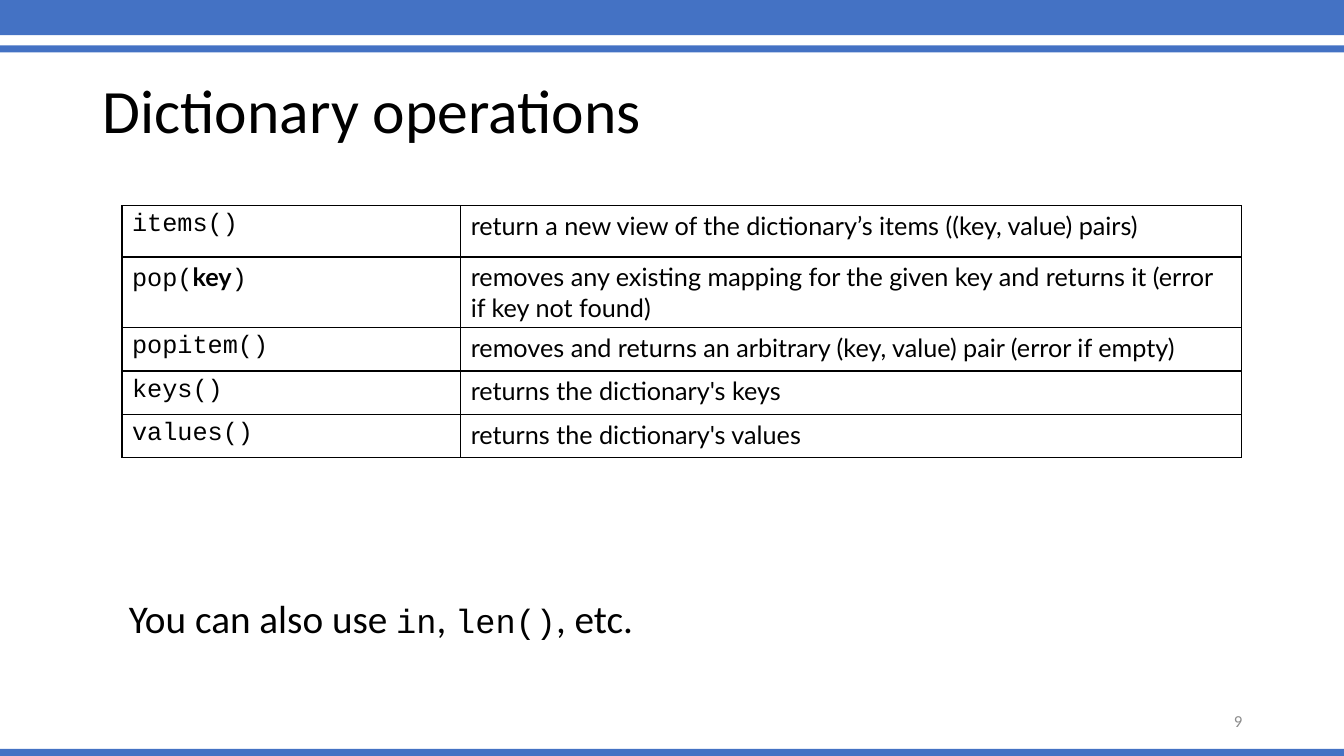
from lxml import etree
from pptx import Presentation
from pptx.dml.color import RGBColor
from pptx.enum.shapes import MSO_SHAPE
from pptx.enum.text import MSO_ANCHOR, PP_ALIGN
from pptx.oxml.ns import qn
from pptx.util import Inches, Pt

RECTANGLE = MSO_SHAPE.RECTANGLE
MIDDLE = MSO_ANCHOR.MIDDLE
LEFT, RIGHT = PP_ALIGN.LEFT, PP_ALIGN.RIGHT

# Content
BLUE, BLACK, GRAY = "4472C4", "000000", "8C8C8C"
SANS, CODE, BODY = "Calibri", "Courier New", "Lato"
WIDTH, HEIGHT = 13.33, 7.5

BANDS = [(0, 0.35), (0.45, 0.07), (7.43, 0.07)]  # top, height

# Runs are (text, font, size, bold)
TITLE = [("Dictionary operations", SANS, 44, False)]
CLOSING = [
    ("You can also use ", SANS, 28, False),
    ("in", CODE, 24, False),
    (", ", SANS, 28, False),
    ("len()", CODE, 24, False),
    (", etc.", SANS, 28, False),
]
PAGE_NUMBER = [("9", SANS, 12, False)]

# Box, runs, colour, alignment, line spacing
TEXTS = [
    ((0.92, 0.4, 11.5, 1.45), TITLE, BLACK, LEFT, 0.9),
    ((1.18, 5.43, 11.24, 1.45), CLOSING, BLACK, LEFT, 0.9),
    ((9.42, 6.95, 3, 0.4), PAGE_NUMBER, GRAY, RIGHT, 1.0),
]

TABLE_LEFT, TABLE_TOP = 1.21, 2.04
COLUMN_WIDTHS = [3.36, 7.74]
# Row height, parts of the call as (text, font, bold), description
OPERATIONS = [
    (0.51, [("items()", CODE, False)],
     "return a new view of the dictionary’s items ((key, value) pairs)"),
    (0.7, [("pop(", CODE, False), ("key", BODY, True), (")", CODE, False)],
     "removes any existing mapping for the given key and returns it "
     "(error if key not found)"),
    (0.43, [("popitem()", CODE, False)],
     "removes and returns an arbitrary (key, value) pair (error if empty)"),
    (0.43, [("keys()", CODE, False)], "returns the dictionary's keys"),
    (0.43, [("values()", CODE, False)], "returns the dictionary's values"),
]
TABLE_SIZE = 18


def color(value):
    return RGBColor.from_string(value)


def write(para, runs, ink):
    for text, font, size, bold in runs:
        span = para.add_run()
        span.text = text
        span.font.color.rgb = color(ink)
        for name, value in {"name": font, "size": Pt(size), "bold": bold}.items():
            setattr(span.font, name, value)


def add_borders(cell, ink, points):
    properties = cell._tc.get_or_add_tcPr()
    for side in ("a:lnL", "a:lnR", "a:lnT", "a:lnB"):
        line = etree.SubElement(properties, qn(side), w=str(Pt(points)))
        fill = etree.SubElement(line, qn("a:solidFill"))
        etree.SubElement(fill, qn("a:srgbClr"), val=ink)


deck = Presentation()
deck.slide_width, deck.slide_height = Inches(WIDTH), Inches(HEIGHT)
page = deck.slides.add_slide(deck.slide_layouts[6])

# Blue bands
for top, height in BANDS:
    band = page.shapes.add_shape(
        RECTANGLE, 0, Inches(top), deck.slide_width, Inches(height))
    band.shadow.inherit = False
    band.fill.solid()
    band.fill.fore_color.rgb = color(BLUE)
    band.line.fill.background()

# Title, closing line and page number
for place, runs, ink, alignment, spacing in TEXTS:
    box = page.shapes.add_textbox(*map(Inches, place))
    box.text_frame.word_wrap = True
    box.text_frame.vertical_anchor = MIDDLE
    para = box.text_frame.paragraphs[0]
    para.alignment = alignment
    para.line_spacing = spacing
    write(para, runs, ink)

# Table of operations
table = page.shapes.add_table(
    len(OPERATIONS), len(COLUMN_WIDTHS), Inches(TABLE_LEFT), Inches(TABLE_TOP),
    Inches(sum(COLUMN_WIDTHS)), Inches(sum(row[0] for row in OPERATIONS))).table
table.first_row = table.horz_banding = False
for column, width in zip(table.columns, COLUMN_WIDTHS):
    column.width = Inches(width)
for row, (height, call, description) in zip(table.rows, OPERATIONS):
    row.height = Inches(height)
    for cell, parts in zip(row.cells, (call, [(description, BODY, False)])):
        add_borders(cell, BLACK, 1)
        cell.fill.background()
        runs = [(text, font, TABLE_SIZE, bold) for text, font, bold in parts]
        write(cell.text_frame.paragraphs[0], runs, BLACK)

deck.save("out.pptx")
